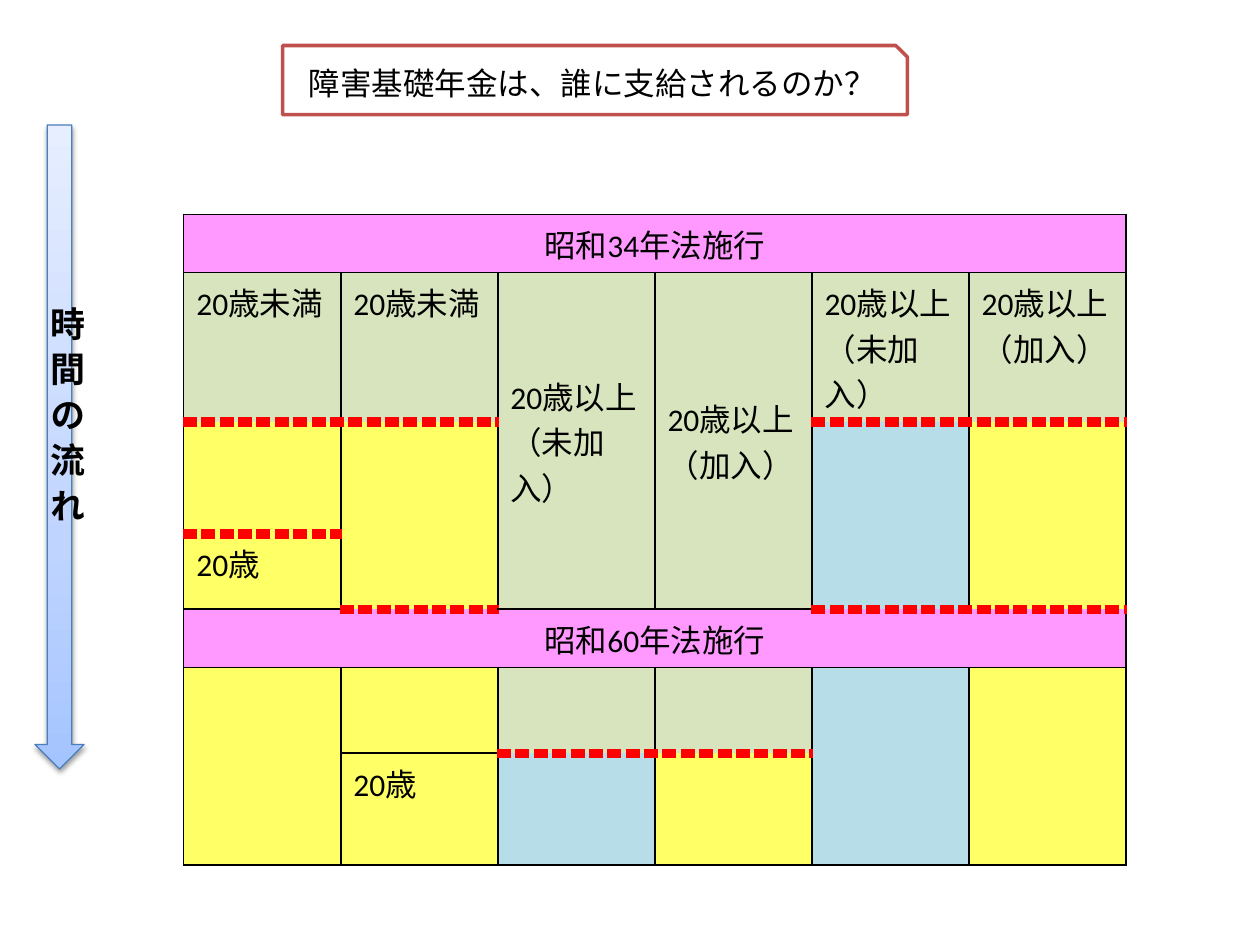
from lxml import etree
from pptx import Presentation
from pptx.dml.color import RGBColor
from pptx.enum.shapes import MSO_SHAPE
from pptx.enum.text import MSO_ANCHOR, MSO_AUTO_SIZE, PP_ALIGN
from pptx.oxml import parse_xml
from pptx.oxml.ns import nsdecls, qn
from pptx.util import Pt

SNIPPED = MSO_SHAPE.SNIP_1_RECTANGLE
DOWN_ARROW = MSO_SHAPE.DOWN_ARROW
MIDDLE = MSO_ANCHOR.MIDDLE
TOP = MSO_ANCHOR.TOP
CENTER = PP_ALIGN.CENTER
LEFT = PP_ALIGN.LEFT
GROW = MSO_AUTO_SIZE.SHAPE_TO_FIT_TEXT

BLACK = RGBColor(0x00, 0x00, 0x00)
WHITE = RGBColor(0xFF, 0xFF, 0xFF)
RED = RGBColor(0xFF, 0x00, 0x00)
PINK = RGBColor(0xFF, 0x99, 0xFF)
GREEN = RGBColor(0xD7, 0xE4, 0xBD)
YELLOW = RGBColor(0xFF, 0xFF, 0x66)
AQUA = RGBColor(0xB7, 0xDE, 0xE8)
BRICK = RGBColor(0xC0, 0x50, 0x4D)
ARROW_LINE = RGBColor(0x4B, 0x7E, 0xBC)
ARROW_STOPS = [
    (0, RGBColor(0xA4, 0xC4, 0xFF)),
    (35, RGBColor(0xBF, 0xD4, 0xFF)),
    (100, RGBColor(0xE6, 0xEE, 0xFF)),
]

LATIN = "Calibri"
JAPANESE = "Noto Sans CJK JP"

ROW_HEIGHTS = [17.5, 22.5, 64, 43, 22.5, 49, 64]
COLUMN_WIDTH = 89.75
ROW_FILLS = [
    [PINK] * 6,
    [GREEN] * 6,
    [YELLOW, YELLOW, GREEN, GREEN, AQUA, YELLOW],
    [YELLOW, YELLOW, GREEN, GREEN, AQUA, YELLOW],
    [PINK] * 6,
    [YELLOW, YELLOW, GREEN, GREEN, AQUA, YELLOW],
    [YELLOW, YELLOW, AQUA, YELLOW, AQUA, YELLOW],
]
CELL_TEXTS = {
    (0, 0): ("昭和34年法施行", CENTER, TOP),
    (1, 0): ("20歳未満", LEFT, TOP),
    (1, 1): ("20歳未満", LEFT, TOP),
    (1, 2): ("20歳以上（未加入）", LEFT, MIDDLE),
    (1, 3): ("20歳以上（加入）", LEFT, MIDDLE),
    (1, 4): ("20歳以上（未加入）", LEFT, TOP),
    (1, 5): ("20歳以上（加入）", LEFT, TOP),
    (3, 0): ("20歳", LEFT, TOP),
    (4, 0): ("昭和60年法施行", CENTER, TOP),
    (6, 1): ("20歳", LEFT, TOP),
}
MERGES = [
    ((0, 0), (0, 5)), ((4, 0), (4, 5)),
    ((1, 2), (3, 2)), ((1, 3), (3, 3)),
    ((2, 1), (3, 1)), ((2, 4), (3, 4)), ((2, 5), (3, 5)),
    ((5, 0), (6, 0)), ((5, 4), (6, 4)), ((5, 5), (6, 5)),
]
DASHED_COLUMNS = {1: [0, 1, 4, 5], 2: [0, 1, 4, 5], 3: [1, 4, 5], 5: [2, 3]}


class SlideBuilder:
    def __init__(self, slide):
        self.slide = slide

    def add_run(self, paragraph, text, size=18, latin=LATIN, bold=False):
        run = paragraph.add_run()
        run.text = text
        run.font.size = Pt(size)
        run.font.name = latin
        run.font.bold = bold
        run.font.color.rgb = BLACK
        properties = run.font._element
        etree.SubElement(properties, qn("a:ea")).set("typeface", JAPANESE)
        return properties

    def add_title(self, text, left, top, width, height):
        shape = self.slide.shapes.add_shape(
            SNIPPED, Pt(left), Pt(top), Pt(width), Pt(height))
        shape.shadow.inherit = False
        shape.fill.solid()
        shape.fill.fore_color.rgb = WHITE
        shape.line.color.rgb = BRICK
        shape.line.width = Pt(2)
        shape.text_frame.word_wrap = True
        shape.text_frame.vertical_anchor = MIDDLE
        paragraph = shape.text_frame.paragraphs[0]
        paragraph.alignment = CENTER
        self.add_run(paragraph, text)

    def set_borders(self, cell, above_dashed, below_dashed):
        properties = cell._tc.get_or_add_tcPr()
        edges = [("L", False), ("R", False), ("T", above_dashed), ("B", below_dashed)]
        for edge, dashed in edges:
            width, color, dash = (6, RED, "sysDash") if dashed else (1, BLACK, "solid")
            properties.append(parse_xml(
                f'<a:ln{edge} {nsdecls("a")} w="{Pt(width)}" cap="flat">'
                f'<a:solidFill><a:srgbClr val="{color}"/></a:solidFill>'
                f'<a:prstDash val="{dash}"/></a:ln{edge}>'))

    def add_timeline_table(self, left, top, height):
        frame = self.slide.shapes.add_table(
            len(ROW_HEIGHTS), 6, Pt(left), Pt(top), Pt(6 * COLUMN_WIDTH), Pt(height))
        table = frame.table
        table.first_row = False
        table.horz_banding = False
        for column in table.columns:
            column.width = Pt(COLUMN_WIDTH)
        for row, row_height in zip(table.rows, ROW_HEIGHTS):
            row.height = Pt(row_height)
        frame.height = Pt(height)
        for row, fills in enumerate(ROW_FILLS):
            for column, color in enumerate(fills):
                cell = table.cell(row, column)
                self.set_borders(cell,
                                 column in DASHED_COLUMNS.get(row - 1, []),
                                 column in DASHED_COLUMNS.get(row, []))
                cell.fill.solid()
                cell.fill.fore_color.rgb = color
        for first, last in MERGES:
            table.cell(*first).merge(table.cell(*last))
        for position, (text, alignment, anchor) in CELL_TEXTS.items():
            cell = table.cell(*position)
            cell.vertical_anchor = anchor
            paragraph = cell.text_frame.paragraphs[0]
            paragraph.alignment = alignment
            self.add_run(paragraph, text)

    def add_group(self):
        return self.slide.shapes.add_group_shape()

    def add_time_arrow(self, group, left, top, width, height):
        shape = group.shapes.add_shape(
            DOWN_ARROW, Pt(left), Pt(top), Pt(width), Pt(height))
        shape.line.color.rgb = ARROW_LINE
        shape.line.width = Pt(0.75)
        shape.fill.gradient()
        gradient = shape._element.spPr.find(qn("a:gradFill"))
        stops = "".join(
            f'<a:gs pos="{position * 1000}"><a:srgbClr val="{color}"/></a:gs>'
            for position, color in ARROW_STOPS)
        gradient.getparent().replace(gradient, parse_xml(
            f'<a:gradFill {nsdecls("a")} rotWithShape="1"><a:gsLst>{stops}</a:gsLst>'
            '<a:lin ang="16200000" scaled="1"/></a:gradFill>'))
        shape._element.spPr.append(parse_xml(
            f'<a:effectLst {nsdecls("a")}><a:outerShdw blurRad="{Pt(3.1)}" '
            f'dist="{Pt(1.6)}" dir="5400000" rotWithShape="0"><a:srgbClr val="{BLACK}">'
            '<a:alpha val="38000"/></a:srgbClr></a:outerShdw></a:effectLst>'))

    def add_vertical_text(self, group, text, left, top, width, height):
        shape = group.shapes.add_textbox(Pt(left), Pt(top), Pt(width), Pt(height))
        frame = shape.text_frame
        frame.word_wrap = True
        frame.auto_size = GROW
        frame._txBody.bodyPr.set("vert", "eaVert")
        properties = self.add_run(frame.paragraphs[0], text, 20, JAPANESE, True)
        properties.set("spc", "600")


def main():
    presentation = Presentation()
    presentation.slide_width = Pt(720)
    presentation.slide_height = Pt(540)
    slide = presentation.slides.add_slide(presentation.slide_layouts[6])
    builder = SlideBuilder(slide)
    builder.add_timeline_table(105, 122.5, 328.5)
    builder.add_title("障害基礎年金は、誰に支給されるのか？", 161.5, 26, 357, 39.5)
    group = builder.add_group()
    builder.add_time_arrow(group, 20, 71.5, 28, 368)
    builder.add_vertical_text(group, "時間の流れ", 14.5, 168, 39, 232.5)
    presentation.save("out.pptx")


if __name__ == "__main__":
    main()
